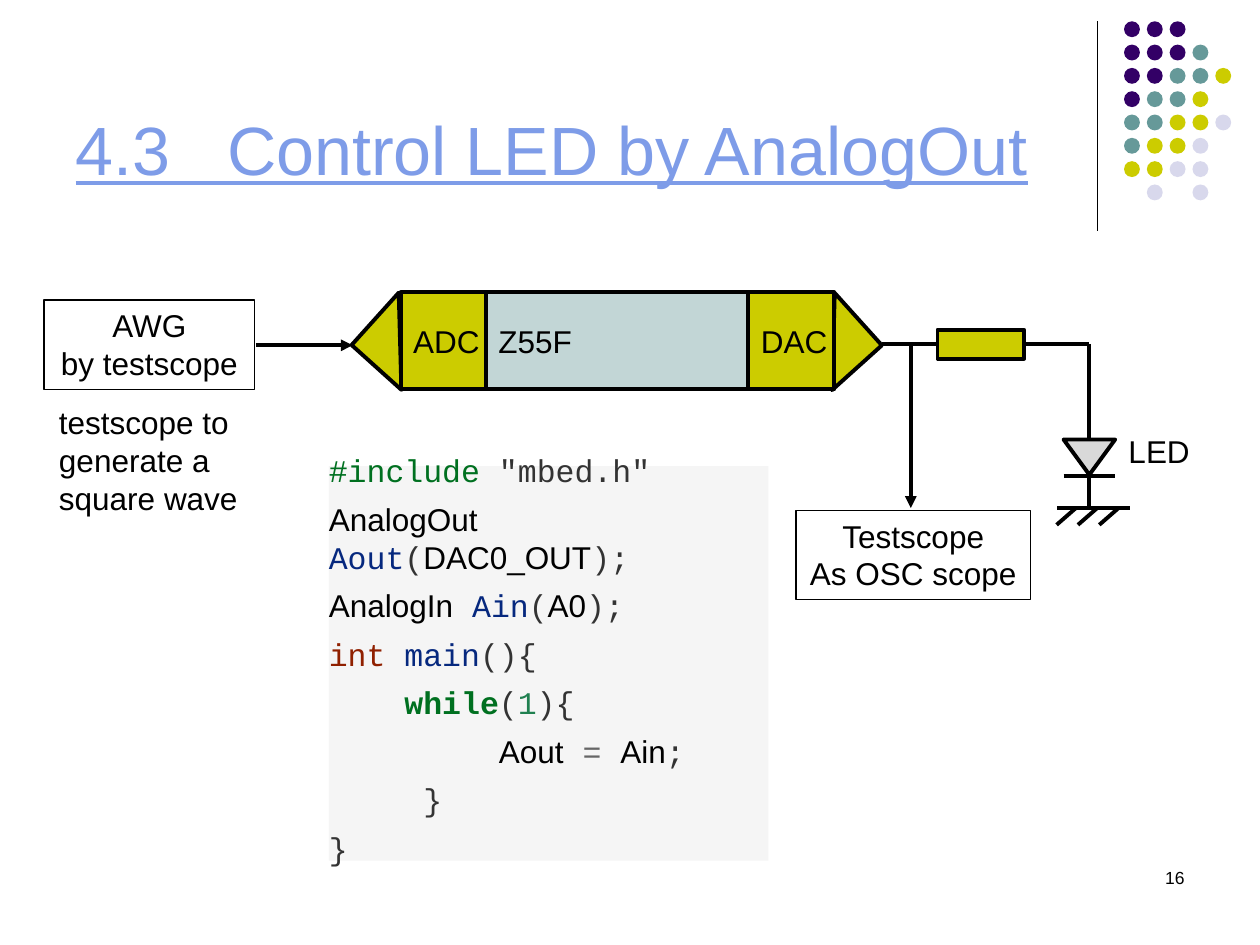
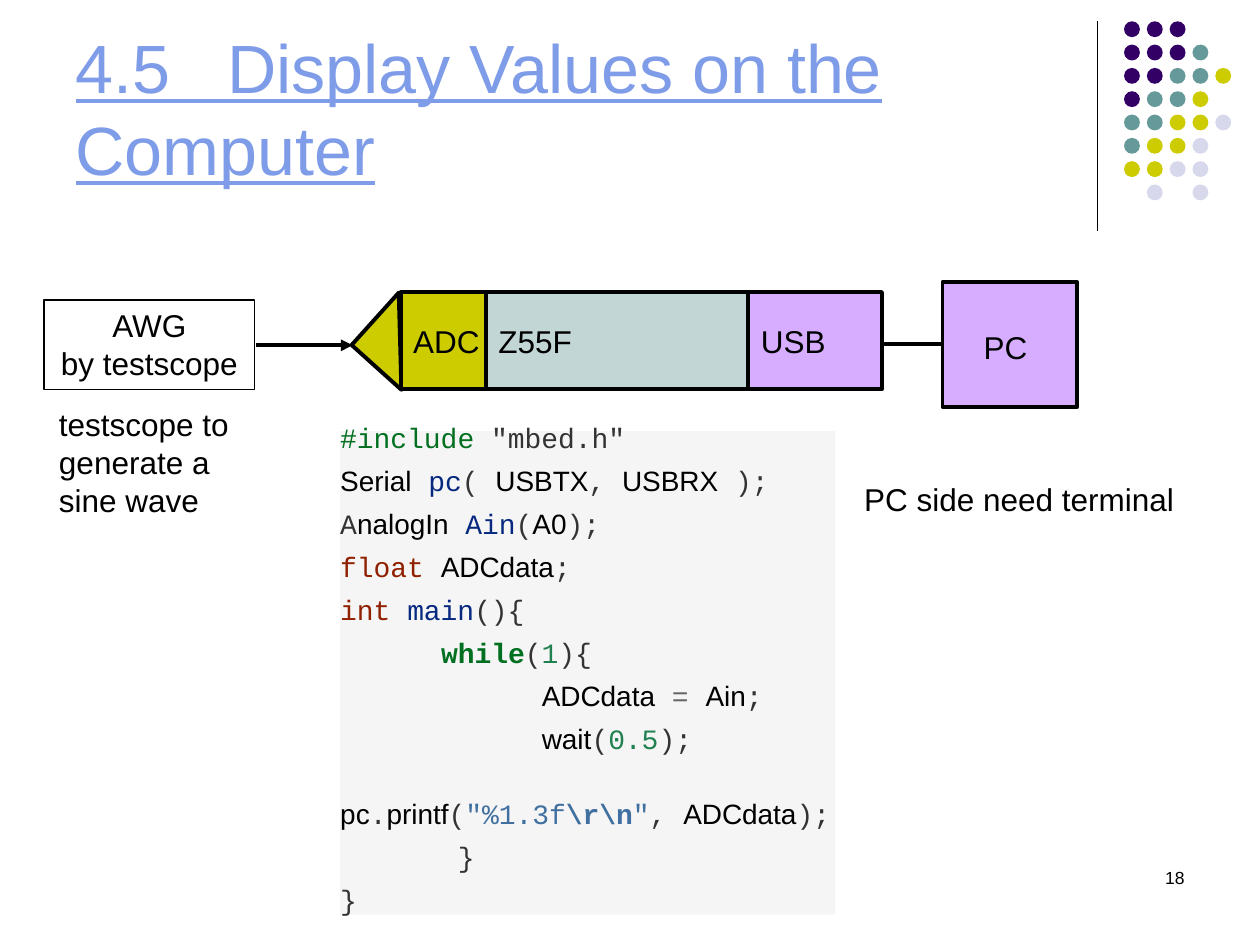
from dataclasses import dataclass

from pptx import Presentation
from pptx.dml.color import RGBColor
from pptx.enum.shapes import MSO_CONNECTOR as Link, MSO_SHAPE as Shape
from pptx.enum.text import MSO_ANCHOR as Anchor, MSO_AUTO_SIZE as AutoSize, PP_ALIGN as Align
from pptx.oxml.ns import qn
from pptx.util import Cm, Pt


@dataclass(frozen=True)
class Theme:
    sans: str = "Arial"
    mono: str = "Courier New"
    title_size: int = 39
    text_size: int = 18
    number_size: int = 10
    thin: float = 0.75
    thick: float = 2.25
    ink: str = "000000"
    title: str = "7E9CE8"
    analog: str = "CCCC00"
    chip: str = "C2D6D6"
    usb: str = "D6ADFF"
    diode: str = "D9D9D9"
    code_back: str = "F5F5F5"


THEME = Theme()

# Code roles: font, colour, bold
ROLES = {
    "name": (THEME.sans, THEME.ink, False),
    "include": (THEME.mono, "007020", False),
    "keyword": (THEME.mono, "007020", True),
    "plain": (THEME.mono, "333333", False),
    "function": (THEME.mono, "06287E", False),
    "type": (THEME.mono, "902000", False),
    "number": (THEME.mono, "208050", False),
    "operator": (THEME.mono, "666666", False),
    "string": (THEME.mono, "4070A0", False),
    "escape": (THEME.mono, "4070A0", True),
}

# Dot ornament: one letter per dot, one string per row
DOT_COLOURS = {"P": "330066", "T": "669999", "Y": "CCCC00", "L": "D8D8EC"}
DOT_ROWS = ["PPP", "PPPT", "PPTTY", "PTTY", "TTYYL", "TYYL", "YYLL", " L L"]

# The signal chain
CHAIN_TOP, CHAIN_HEIGHT = 5.89, 1.96
WIRE_Y = 6.93
LED_X = 21.95


class SlideBuilder:
    def __init__(self, theme):
        self.theme = theme
        self.deck = Presentation()
        self.deck.slide_width, self.deck.slide_height = Cm(25.4), Cm(19.05)
        self.page = None

    def new_page(self, title, number):
        self.page = self.deck.slides.add_slide(self.deck.slide_layouts[5])
        self.ornament()
        self.title(title)
        self.text(18.21, 17.35, 5.92, 1.27, [str(number)], align=Align.RIGHT,
                  size=self.theme.number_size)

    def ornament(self):
        self.line(22.12, 0.43, 22.12, 4.65, width=self.theme.thin)
        for row, dots in enumerate(DOT_ROWS):
            for column, key in enumerate(dots):
                if key in DOT_COLOURS:
                    self.shape(Shape.OVAL, 22.66 + 0.46 * column, 0.43 + 0.47 * row,
                               0.32, 0.32, DOT_COLOURS[key], width=None)

    def title(self, text):
        holder = self.page.shapes.title
        holder.left, holder.top = Cm(1.27), Cm(0.33)
        holder.width, holder.height = Cm(20.96), Cm(3.61)
        frame = holder.text_frame
        frame.auto_size, frame.word_wrap = AutoSize.NONE, True
        frame.vertical_anchor = Anchor.BOTTOM
        para = frame.paragraphs[0]
        para.alignment = Align.LEFT
        span = self.span(para, text, self.theme.sans, self.theme.title_size, self.theme.title)
        span.font.underline = True

    def span(self, para, text, font, size, colour, bold=False):
        span = para.add_run()
        span.text = text
        span.font.name, span.font.size, span.font.bold = font, Pt(size), bold
        span.font.color.rgb = RGBColor.from_string(colour)
        return span

    def fill_text(self, box, lines, align=Align.LEFT, anchor=Anchor.TOP, wrap=True, size=None):
        frame = box.text_frame
        frame.word_wrap, frame.vertical_anchor = wrap, anchor
        for index, line in enumerate(lines):
            para = frame.add_paragraph() if index else frame.paragraphs[0]
            para.alignment = align
            self.span(para, line, self.theme.sans, size or self.theme.text_size, self.theme.ink)

    def text(self, left, top, width, height, lines, **layout):
        box = self.page.shapes.add_textbox(Cm(left), Cm(top), Cm(width), Cm(height))
        self.fill_text(box, lines, **layout)

    def shape(self, kind, left, top, wide, high, fill=None, width=THEME.thick, turn=0):
        shape = self.page.shapes.add_shape(kind, Cm(left), Cm(top), Cm(wide), Cm(high))
        shape.shadow.inherit = False
        shape.rotation = turn
        if fill:
            shape.fill.solid()
            shape.fill.fore_color.rgb = RGBColor.from_string(fill)
        else:
            shape.fill.background()
        if width:
            shape.line.width = Pt(width)
            shape.line.color.rgb = RGBColor.from_string(self.theme.ink)
        else:
            shape.line.fill.background()
        return shape

    def block(self, left, wide, label, fill):
        box = self.shape(Shape.RECTANGLE, left, CHAIN_TOP, wide, CHAIN_HEIGHT, fill)
        self.fill_text(box, [label], anchor=Anchor.MIDDLE, wrap=False)

    def device(self, left, top, wide, lines):
        box = self.shape(Shape.RECTANGLE, left, top, wide, 1.8, width=self.theme.thin)
        self.fill_text(box, lines, align=Align.CENTER, wrap=False)

    def line(self, x1, y1, x2, y2, width=THEME.thick, arrow=False):
        link = self.page.shapes.add_connector(Link.STRAIGHT, Cm(x1), Cm(y1), Cm(x2), Cm(y2))
        link.line.width = Pt(width)
        link.line.color.rgb = RGBColor.from_string(self.theme.ink)
        properties = link._element.spPr
        if arrow:
            end = properties.makeelement(qn("a:tailEnd"), {"type": "triangle"})
            properties.find(qn("a:ln")).append(end)
        properties.append(properties.makeelement(qn("a:effectLst"), {}))

    def code(self, left, top, wide, high, size, lines, spaced_line=None):
        """Each line is its indent in characters, then (role, text) pairs."""
        box = self.shape(Shape.RECTANGLE, left, top, wide, high, self.theme.code_back, width=None)
        frame = box.text_frame
        frame.word_wrap, frame.vertical_anchor = True, Anchor.MIDDLE
        frame.margin_left = frame.margin_top = frame.margin_right = 0
        frame.margin_bottom = Cm(0.18)
        for index, (indent, *tokens) in enumerate(lines):
            para = frame.add_paragraph() if index else frame.paragraphs[0]
            para.alignment = Align.LEFT
            gap = 0.34 * size
            para.space_before = Pt(gap + 1.13 * size if index == spaced_line else gap)
            # A monospaced character is 0.6 of the type size wide
            para._p.get_or_add_pPr().set("marL", str(int(Pt(0.6 * size * indent))))
            for role, text in tokens:
                if role == "break":
                    para.add_line_break()
                else:
                    font, colour, bold = ROLES[role]
                    self.span(para, text, font, size, colour, bold)

    def signal_input(self, note, note_top):
        """Generator, arrow, input tip, converter and board."""
        self.device(0.89, 6.05, 4.24, ["AWG", "by testscope"])
        self.line(5.16, 6.96, 7.11, 6.96, arrow=True)
        self.shape(Shape.RIGHT_TRIANGLE, 7.39, 6.17, 1.35, 1.42, self.theme.analog, turn=42)
        self.block(8.08, 1.73, "ADC", self.theme.analog)
        self.block(9.8, 5.28, "Z55F", self.theme.chip)
        self.text(0.94, note_top, 4.52, 2.57, [note])


INCLUDE = (0, ("include", "#include "), ("plain", '"mbed.h"'))
MAIN = (0, ("type", "int "), ("function", "main"), ("plain", "(){"))
WHILE = (("keyword", "while"), ("plain", "("), ("number", "1"), ("plain", "){"))
AIN = (("function", " Ain"), ("plain", "("), ("name", "A0"), ("plain", ");"))
FROM_AIN = (("operator", " = "), ("name", "Ain"), ("plain", ";"))
CLOSE = ("plain", "}")

LED_CODE = [
    INCLUDE,
    (0, ("name", "AnalogOut"), ("break", ""), ("function", "Aout"), ("plain", "("),
     ("name", "DAC0_OUT"), ("plain", ");")),
    (0, ("name", "AnalogIn"), *AIN),
    MAIN,
    (4, *WHILE),
    (9, ("name", "Aout"), *FROM_AIN),
    (5, CLOSE),
    (0, CLOSE),
]

SERIAL_CODE = [
    INCLUDE,
    (0, ("name", "Serial"), ("function", " pc"), ("plain", "( "), ("name", "USBTX"),
     ("plain", ", "), ("name", "USBRX"), ("plain", " );")),
    (0, ("plain", "A"), ("name", "nalogIn"), *AIN),
    (0, ("type", "float "), ("name", "ADCdata"), ("plain", ";")),
    MAIN,
    (6, *WHILE),
    (12, ("name", "ADCdata"), *FROM_AIN),
    (12, ("name", "wait"), ("plain", "("), ("number", "0.5"), ("plain", ");")),
    (0, ("name", "pc"), ("plain", "."), ("name", "printf"), ("plain", "("),
     ("string", '"%1.3f'), ("escape", r"\r\n"), ("string", '"'), ("plain", ", "),
     ("name", "ADCdata"), ("plain", ");")),
    (7, CLOSE),
    (0, CLOSE),
]


def led_page(builder):
    theme = builder.theme
    builder.new_page("4.3   Control LED by AnalogOut", 16)
    builder.signal_input("testscope to generate a square wave", 8)

    # Output converter, tip and resistor
    builder.shape(Shape.RIGHT_TRIANGLE, 16.09, 6.21, 1.42, 1.35, theme.analog, turn=228)
    builder.block(15.09, 1.73, "DAC", theme.analog)
    builder.line(17.78, WIRE_Y, 18.97, WIRE_Y)
    builder.shape(Shape.RECTANGLE, 18.9, 6.65, 1.75, 0.58, theme.analog)

    # LED and its wires
    builder.line(20.68, WIRE_Y, LED_X, WIRE_Y)
    builder.line(LED_X, WIRE_Y, LED_X, 8.92)
    builder.shape(Shape.ISOSCELES_TRIANGLE, 21.44, 8.86, 1.04, 0.71, theme.diode, turn=180)
    builder.line(21.44, 9.6, 22.48, 9.6)
    builder.line(LED_X, 9.55, LED_X, 10.24)
    builder.text(22.5, 8.59, 1.75, 1.02, ["LED"], wrap=False)

    # Ground
    builder.line(21.31, 10.24, 22.78, 10.24)
    for stroke in range(3):
        x = 21.69 + 0.43 * stroke
        builder.line(x, 10.24, x - 0.39, 10.58)

    # Program and oscilloscope
    builder.code(6.63, 9.4, 8.86, 7.95, 18, LED_CODE)
    builder.device(16.05, 10.29, 4.72, ["Testscope", "As OSC scope"])
    builder.line(18.36, WIRE_Y, 18.36, 10.24, arrow=True)


def serial_page(builder):
    theme = builder.theme
    builder.new_page("4.5   Display Values on the Computer", 18)
    builder.signal_input("testscope to generate a sine wave", 8.05)

    # USB link to the computer
    builder.block(15.09, 2.69, "USB", theme.usb)
    builder.line(17.78, WIRE_Y, 18.97, WIRE_Y)
    builder.shape(Shape.RECTANGLE, 19, 5.69, 2.72, 2.51, theme.usb)
    label = builder.shape(Shape.RECTANGLE, 19.58, 6.48, 1.4, 1.02, theme.usb, width=None)
    builder.fill_text(label, ["PC"], wrap=False)

    # Program and remark
    builder.code(6.86, 8.69, 9.98, 9.75, 16, SERIAL_CODE, spaced_line=8)
    builder.text(17.17, 9.55, 7.65, 1.02, ["PC side need terminal"])


def main():
    builder = SlideBuilder(THEME)
    led_page(builder)
    serial_page(builder)
    builder.deck.save("out.pptx")


if __name__ == "__main__":
    main()
